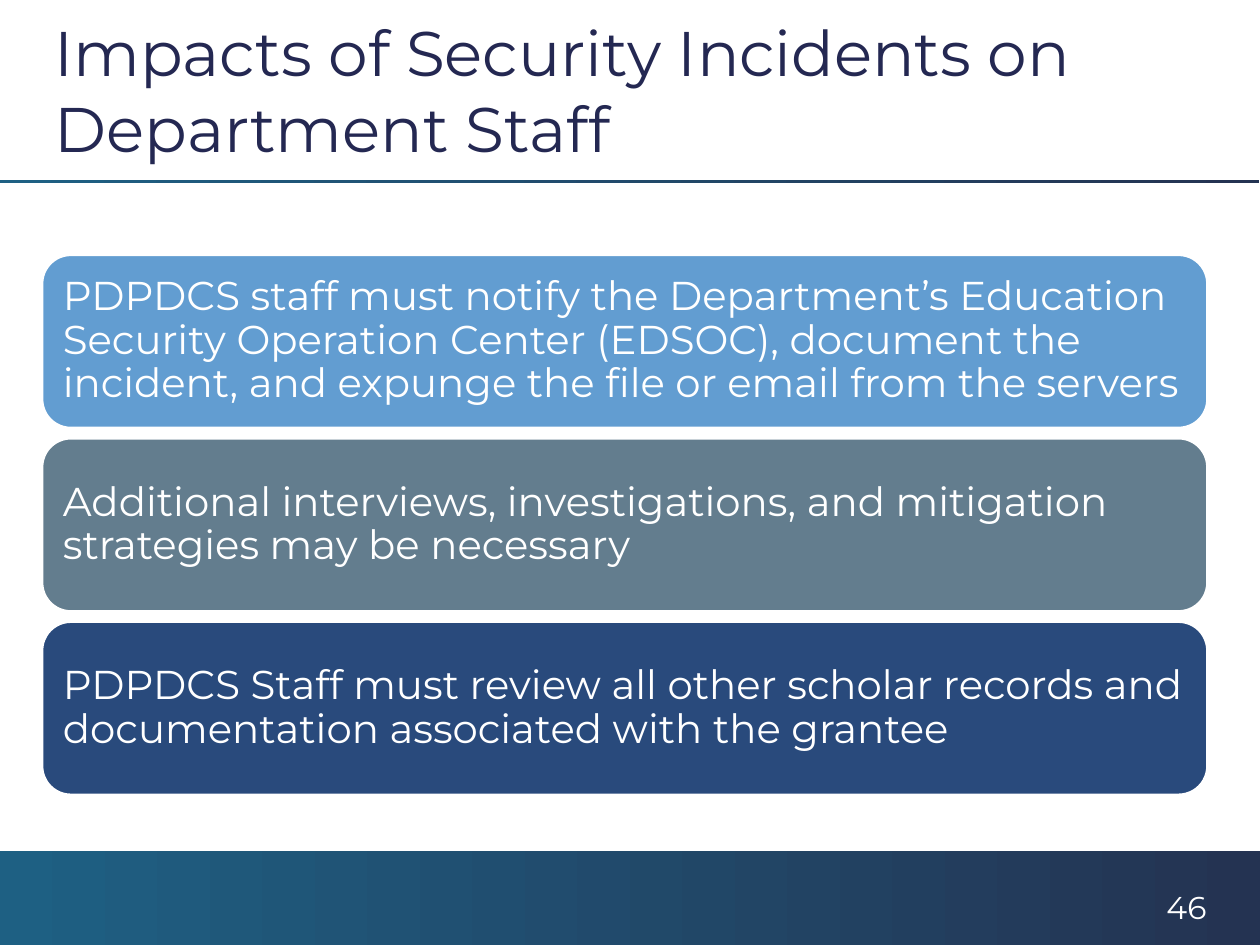
from dataclasses import dataclass

from pptx import Presentation
from pptx.dml.color import RGBColor
from pptx.enum.shapes import MSO_SHAPE
from pptx.enum.text import MSO_ANCHOR, PP_ALIGN
from pptx.shapes.autoshape import Shape
from pptx.slide import Slide
from pptx.util import Pt


@dataclass(frozen=True)
class Theme:
    font: str = "Montserrat"
    title_color: str = "242852"
    light: str = "FFFFFF"
    band_start: str = "1E6083"
    band_end: str = "243352"
    title_size: float = 36
    card_size: float = 23
    number_size: float = 18


@dataclass(frozen=True)
class Area:
    left: float
    top: float
    width: float
    height: float

    def lengths(self) -> list[int]:
        return [Pt(value) for value in (self.left, self.top, self.width, self.height)]


@dataclass(frozen=True)
class Card:
    text: str
    color: str


THEME = Theme()
PAGE_WIDTH, PAGE_HEIGHT = 720, 540
CONTENT_LEFT, CONTENT_WIDTH = 24, 666
CARD_TOP, CARD_HEIGHT, CARD_PITCH = 145.6, 99, 104.8
CARD_INSET = 7.2

BANDS = [Area(0, 486, PAGE_WIDTH, 54), Area(-0.7, 102.8, PAGE_WIDTH, 1.8)]
CARDS = [
    Card(
        "PDPDCS staff must notify the Department’s Education Security Operation "
        "Center (EDSOC), document the incident, and expunge the file or email "
        "from the servers",
        "629DD1",
    ),
    Card(
        "Additional interviews, investigations, and mitigation strategies "
        "may be necessary",
        "637D8E",
    ),
    Card(
        "PDPDCS Staff must review all other scholar records and documentation "
        "associated with the grantee",
        "294A7C",
    ),
]


def apply_format(target: object, values: dict[str, object]) -> None:
    for name, value in values.items():
        setattr(target, name, value)


def write_text(box: Shape, text: str, size: float, color: str,
               anchor: MSO_ANCHOR, spacing: float = 1.0) -> None:
    frame = box.text_frame
    apply_format(frame, {"word_wrap": True, "vertical_anchor": anchor})
    para = frame.paragraphs[0]
    apply_format(para, {"alignment": PP_ALIGN.LEFT, "line_spacing": spacing})
    span = para.add_run()
    span.text = text
    apply_format(span.font, {"name": THEME.font, "size": Pt(size)})
    span.font.color.rgb = RGBColor.from_string(color)


def add_band(page: Slide, area: Area) -> None:
    band = page.shapes.add_shape(MSO_SHAPE.RECTANGLE, *area.lengths())
    band.shadow.inherit = False
    band.line.fill.background()
    band.fill.gradient()
    band.fill.gradient_angle = 0
    colors = (THEME.band_start, THEME.band_end)
    for stop, color, position in zip(band.fill.gradient_stops, colors, (0, 1)):
        stop.color.rgb = RGBColor.from_string(color)
        stop.position = position


def add_label(page: Slide, area: Area, text: str, size: float, color: str,
              anchor: MSO_ANCHOR) -> None:
    box = page.shapes.add_textbox(*area.lengths())
    write_text(box, text, size, color, anchor)


def add_card(page: Slide, card: Card, area: Area) -> None:
    box = page.shapes.add_shape(MSO_SHAPE.ROUNDED_RECTANGLE, *area.lengths())
    box.shadow.inherit = False
    box.fill.solid()
    box.fill.fore_color.rgb = RGBColor.from_string(card.color)
    box.line.color.rgb = RGBColor.from_string(THEME.light)
    box.line.width = Pt(1.5)
    sides = ("left", "top", "right", "bottom")
    apply_format(box.text_frame, {f"margin_{side}": Pt(CARD_INSET) for side in sides})
    write_text(box, card.text, THEME.card_size, THEME.light, MSO_ANCHOR.MIDDLE, 0.9)


def main() -> None:
    deck = Presentation()
    apply_format(deck, {"slide_width": Pt(PAGE_WIDTH), "slide_height": Pt(PAGE_HEIGHT)})
    page = deck.slides.add_slide(deck.slide_layouts[6])
    for area in BANDS:
        add_band(page, area)
    add_label(page, Area(CONTENT_LEFT, 12.2, CONTENT_WIDTH, 78),
              "Impacts of Security Incidents on Department Staff",
              THEME.title_size, THEME.title_color, MSO_ANCHOR.MIDDLE)
    for index, card in enumerate(CARDS):
        top = CARD_TOP + index * CARD_PITCH
        add_card(page, card, Area(CONTENT_LEFT, top, CONTENT_WIDTH, CARD_HEIGHT))
    add_label(page, Area(659.5, 504, 42, 19.4), "46",
              THEME.number_size, THEME.light, MSO_ANCHOR.TOP)
    deck.save("out.pptx")


if __name__ == "__main__":
    main()
